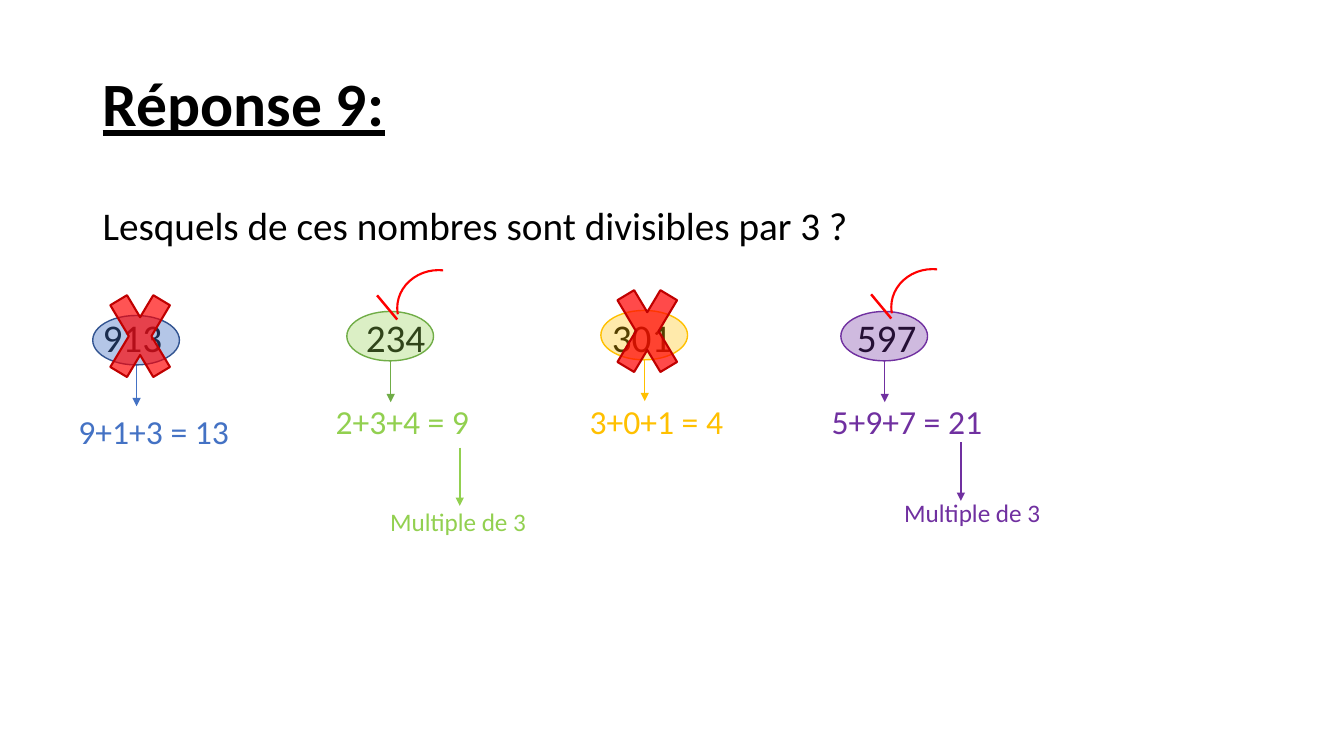
import pptx
import pptx.util
import pptx.dml.color
import pptx.enum.shapes
import pptx.enum.text
import pptx.oxml
import pptx.oxml.ns
import lxml.etree

Inches = pptx.util.Inches
Pt = pptx.util.Pt
KIND = pptx.enum.shapes.MSO_SHAPE
HUES = {
    "black": "000000", "blue": "4472C4", "navy": "325491", "lime": "92D050",
    "green": "70AD47", "gold": "FFC000", "plum": "7030A0", "red": "FF0000", "brick": "C00000",
}


class Board:
    font = "Calibri"

    def __init__(self, slide):
        self.slide = slide

    def tint(self, hue):
        return pptx.dml.color.RGBColor.from_string(HUES[hue])

    def text(self, words, box, size, hue="black", wrap=False, tight=None, strong=False):
        frame = self.slide.shapes.add_textbox(*map(Inches, box)).text_frame
        frame.word_wrap = wrap
        frame.vertical_anchor = pptx.enum.text.MSO_ANCHOR.TOP
        para = frame.paragraphs[0]
        para.text = words
        para.line_spacing = tight
        font = para.font
        font.name, font.size = self.font, Pt(size)
        font.color.rgb = self.tint(hue)
        font.bold = font.underline = strong

    def line(self, start, end, hue, width, arrow=True):
        link = self.slide.shapes.add_connector(
            pptx.enum.shapes.MSO_CONNECTOR.STRAIGHT, *map(Inches, start + end))
        link.line.color.rgb = self.tint(hue)
        link.line.width = Pt(width)
        props = link._element.spPr
        lxml.etree.SubElement(props, pptx.oxml.ns.qn("a:effectLst"))
        if arrow:
            stroke = link.line._get_or_add_ln()
            lxml.etree.SubElement(stroke, pptx.oxml.ns.qn("a:tailEnd"), type="triangle")

    def shape(self, kind, box, edge, width, fill=None, alpha=100):
        form = self.slide.shapes.add_shape(kind, *map(Inches, box))
        form.shadow.inherit = False
        form.line.color.rgb = self.tint(edge)
        form.line.width = Pt(width)
        if fill:
            form.fill.solid()
            form.fill.fore_color.rgb = self.tint(fill)
            shade = form._element.spPr.find(".//" + pptx.oxml.ns.qn("a:srgbClr"))
            lxml.etree.SubElement(shade, pptx.oxml.ns.qn("a:alpha"), val=str(alpha * 1000))
        else:
            form.fill.background()
        return form

    def tick(self, left, top):
        self.line((left, top), (left + 0.2, top + 0.24), "red", 1.75, arrow=False)
        arc = self.shape(KIND.ARC, (left + 0.2, top - 0.25, 0.82, 0.75), "red", 1.5)
        arc.adjustments[0] = 102.68
        arc.adjustments[1] = 166.11

    def cross(self, left, top, alpha):
        self.shape(KIND.MATH_MULTIPLY, (left, top, 0.82, 1.37), "brick", 1.5, "red", alpha)


def main():
    deck = pptx.Presentation()
    deck.slide_width, deck.slide_height = Inches(13.33), Inches(7.5)
    board = Board(deck.slides.add_slide(deck.slide_layouts[6]))

    board.text("Réponse 9:", (0.92, 0.68, 11.5, 1.45), 44, wrap=True, tight=0.9, strong=True)
    board.text("Lesquels de ces nombres sont divisibles par 3 ?",
               (0.92, 2, 11.5, 0.55), 28, wrap=True, tight=0.9)

    cases = [
        ("913", 0.92, (0.92, 3.13), "blue", "blue", "navy", 40, "9+1+3 = 13", (0.68, 4.03, 1.71)),
        ("234", 3.53, (3.44, 3.09), "green", "lime", "green", 33, "2+3+4 = 9", (3.23, 3.93, 1.54)),
        ("301", 5.97, (5.96, 3.08), "gold", "gold", "gold", 33, "3+0+1 = 4", (5.75, 3.93, 1.54)),
        ("597", 8.4, (8.34, 3.09), "plum", "plum", "plum", 33, "5+9+7 = 21", (8.15, 3.93, 1.71)),
    ]
    for number, start, (left, top), arrow, fill, edge, alpha, total, place in cases:
        board.text(number, (start, 3.11, 0.85, 0.53), 28, tight=0.9)
        mid = left + 0.435
        board.line((mid, top + 0.49), (mid, top + 0.9), arrow, 0.5)
        board.shape(KIND.OVAL, (left, top, 0.86, 0.49), edge, 1, fill, alpha)
        board.text(total, place + (0.5,), 24, fill)

    proofs = [
        ("lime", (4.56, 4.44), (3.77, 4.97), (3.74, 2.93)),
        ("plum", (9.53, 4.39), (8.87, 4.88), (8.64, 2.92)),
    ]
    for hue, (mid, top), place, mark in proofs:
        board.line((mid, top), (mid, top + 0.58), hue, 1.5)
        board.text("Multiple de 3", place + (1.57, 0.4), 18, hue)
        board.tick(*mark)

    board.cross(0.98, 2.65, 67)
    board.cross(6.01, 2.6, 71)
    deck.save("out.pptx")


if __name__ == "__main__":
    main()
